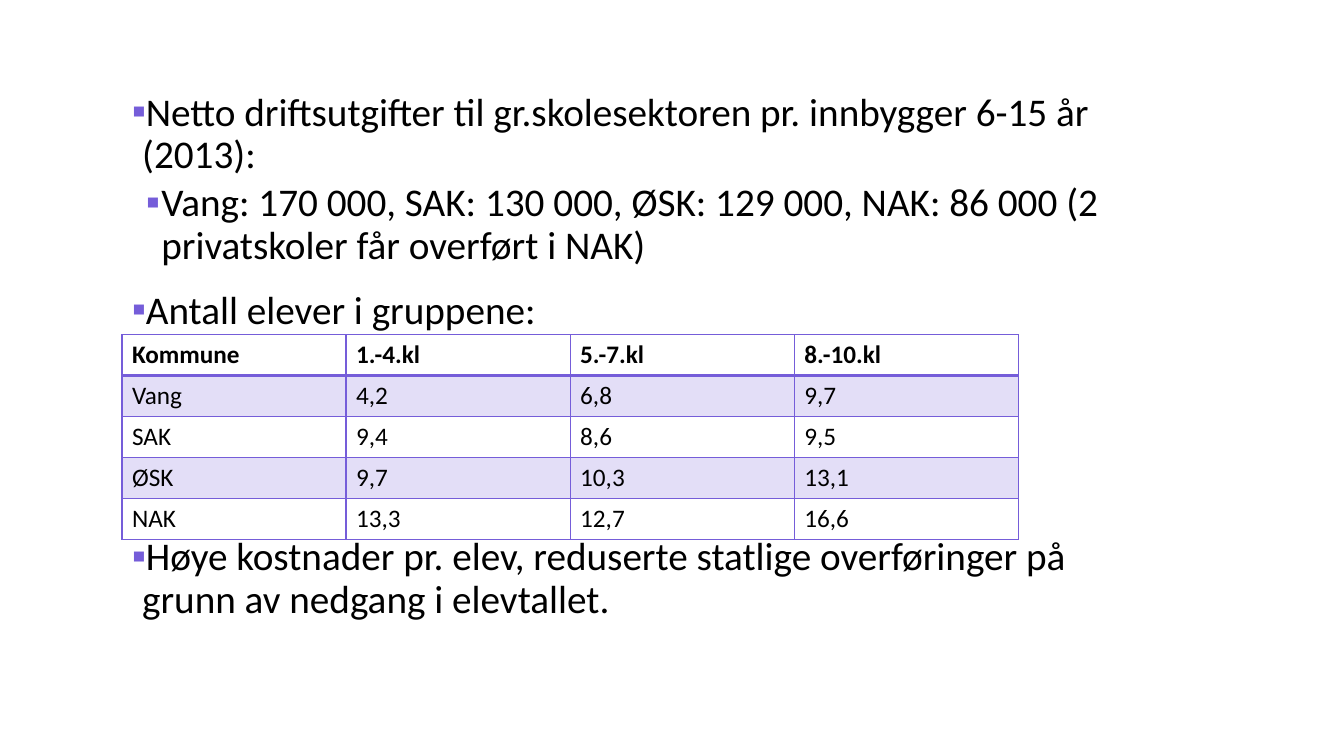
"""Build a slide on school costs and group sizes in four municipalities."""
from lxml.etree import SubElement
from pptx import Presentation
from pptx.dml.color import RGBColor
from pptx.enum.text import MSO_ANCHOR, MSO_AUTO_SIZE
from pptx.oxml.ns import qn
from pptx.util import Inches, Pt

COLORS = {"text": "000000", "accent": "755DD9"}
FONT = "Calibri"


def format_runs(paragraph, size, bold=False):
    for run in paragraph.runs:
        run.font.name = FONT
        run.font.size = Pt(size)
        run.font.bold = bold
        run.font.color.rgb = RGBColor.from_string(COLORS["text"])


def add_border(cell, side, width):
    line = SubElement(cell._tc.get_or_add_tcPr(), qn(f"a:{side}"), w=str(Pt(width)))
    fill = SubElement(line, qn("a:solidFill"))
    SubElement(fill, qn("a:srgbClr"), val=COLORS["accent"])


presentation = Presentation()
presentation.slide_width = Inches(13.33)
presentation.slide_height = Inches(7.5)
slide = presentation.slides.add_slide(presentation.slide_layouts[1])
title = slide.shapes.title
title.element.getparent().remove(title.element)

body = slide.placeholders[1]
body.left, body.top = Inches(1.21), Inches(0.87)
body.width, body.height = Inches(10.21), Inches(5.41)
text_frame = body.text_frame
text_frame.word_wrap = True
text_frame.auto_size = MSO_AUTO_SIZE.NONE
text_frame.vertical_anchor = MSO_ANCHOR.TOP

bullets = [
    ("Netto driftsutgifter til gr.skolesektoren pr. innbygger 6-15 år (2013):", 0, 12),
    ("Vang: 170 000, SAK: 130 000, ØSK: 129 000, NAK: 86 000 "
     "(2 privatskoler får overført i NAK)", 1, 2),
    ("Antall elever i gruppene:", 0, 12),
    ("Høye kostnader pr. elev, reduserte statlige overføringer på grunn av "
     "nedgang i elevtallet.", 0, 144),
]
indents = [(0.1, -0.1), (0.29, -0.15)]
space_after = [2, 4]

text_frame.text = "\n".join(text for text, level, space_before in bullets)
for paragraph, (text, level, space_before) in zip(text_frame.paragraphs, bullets):
    paragraph.level = level
    paragraph.line_spacing = 0.9
    paragraph.space_before = Pt(space_before)
    paragraph.space_after = Pt(space_after[level])
    format_runs(paragraph, 28)
    properties = paragraph._p.get_or_add_pPr()
    margin, indent = indents[level]
    properties.set("marL", str(Inches(margin)))
    properties.set("indent", str(Inches(indent)))
    bullet_color = SubElement(properties, qn("a:buClr"))
    SubElement(bullet_color, qn("a:srgbClr"), val=COLORS["accent"])
    SubElement(properties, qn("a:buFont"), typeface=FONT)
    SubElement(properties, qn("a:buChar"), char="▪")

group_sizes = [
    ("Kommune", "1.-4.kl", "5.-7.kl", "8.-10.kl"),
    ("Vang", "4,2", "6,8", "9,7"),
    ("SAK", "9,4", "8,6", "9,5"),
    ("ØSK", "9,7", "10,3", "13,1"),
    ("NAK", "13,3", "12,7", "16,6"),
]
table = slide.shapes.add_table(
    len(group_sizes), len(group_sizes[0]),
    Inches(1.21), Inches(3.32), Inches(8.89), Inches(2.03),
).table
table.horz_banding = False

for row_index, values in enumerate(group_sizes):
    for column_index, value in enumerate(values):
        cell = table.cell(row_index, column_index)
        cell.text_frame.text = value
        format_runs(cell.text_frame.paragraphs[0], 18, bold=row_index == 0)
        add_border(cell, "lnL", 1)
        add_border(cell, "lnR", 1)
        add_border(cell, "lnT", 2 if row_index == 1 else 1)
        add_border(cell, "lnB", 2 if row_index == 0 else 1)
        if row_index % 2:
            cell.fill.solid()
            cell.fill.fore_color.rgb = RGBColor.from_string(COLORS["accent"])
            color = cell._tc.tcPr.find(qn("a:solidFill")).find(qn("a:srgbClr"))
            SubElement(color, qn("a:alpha"), val="20000")
        else:
            cell.fill.background()

presentation.save("out.pptx")
